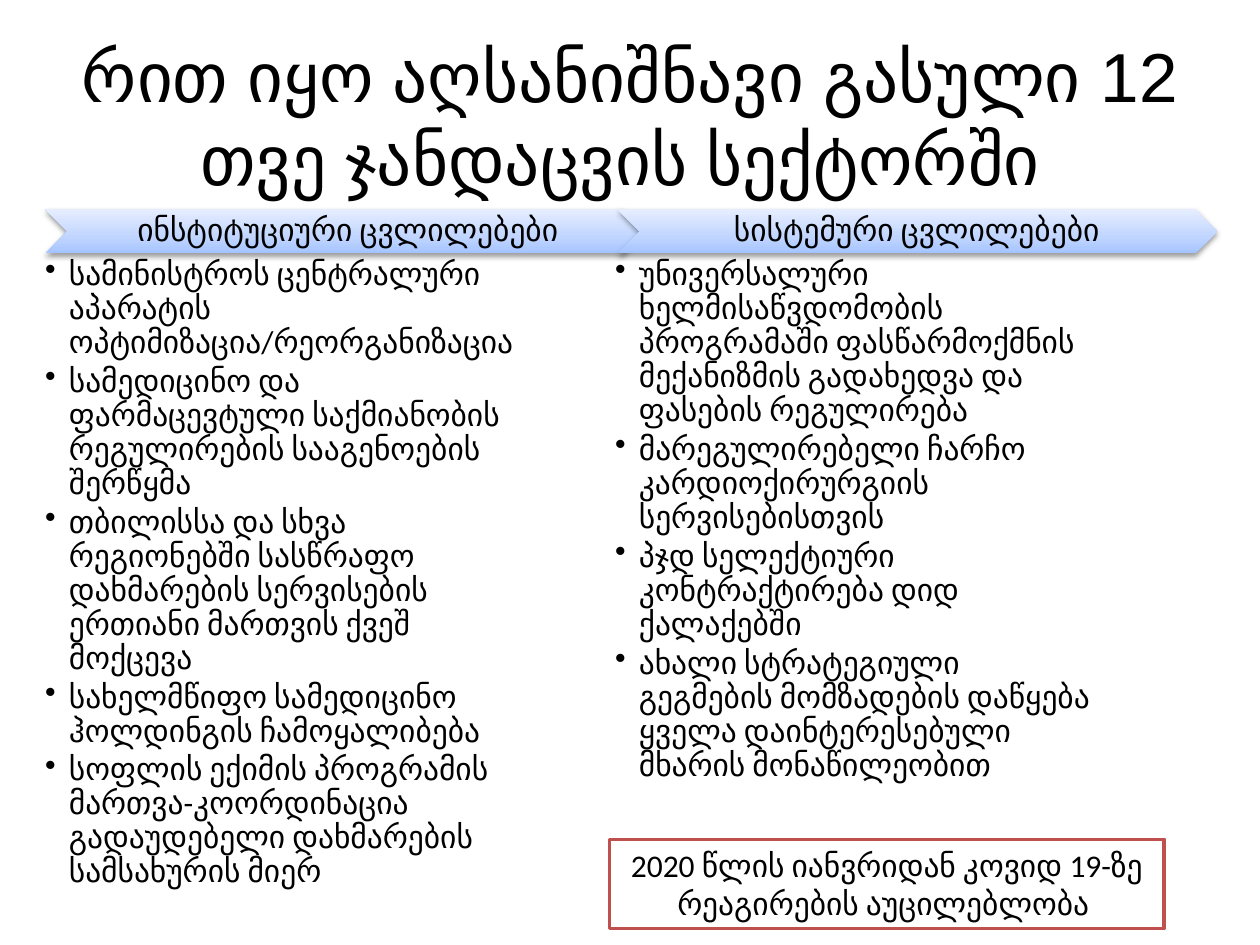
from copy import deepcopy
from dataclasses import dataclass

from pptx import Presentation
from pptx.dml.color import RGBColor
from pptx.enum.shapes import MSO_SHAPE
from pptx.enum.text import MSO_ANCHOR, MSO_AUTO_SIZE, PP_ALIGN
from pptx.oxml import parse_xml
from pptx.oxml.ns import nsdecls, qn
from pptx.util import Cm, Pt

CHEVRON, RECT = MSO_SHAPE.CHEVRON, MSO_SHAPE.RECTANGLE
TOP, MIDDLE = MSO_ANCHOR.TOP, MSO_ANCHOR.MIDDLE
LEFT, CENTER = PP_ALIGN.LEFT, PP_ALIGN.CENTER
NO_FIT = MSO_AUTO_SIZE.NONE


@dataclass(frozen=True)
class Theme:
    ink: str = "000000"
    paper: str = "FFFFFF"
    edge: str = "C0504D"
    blend: tuple = ((0, "A4C4FF"), (0.35, "BFD4FF"), (1, "E6EEFF"))
    head: float = 39.6
    body: float = 18
    head_font: str = "Arial"
    body_font: str = "Calibri"


THEME = Theme()

TITLE = "რით იყო აღსანიშნავი გასული 12 თვე ჯანდაცვის სექტორში "
NOTE = "2020 წლის იანვრიდან კოვიდ 19-ზე რეაგირების აუცილებლობა "
COLUMNS = [
    (0.91, 0.91, "ინსტიტუციური ცვლილებები", [
        "სამინისტროს ცენტრალური აპარატის ოპტიმიზაცია/რეორგანიზაცია",
        "სამედიცინო და ფარმაცევტული საქმიანობის რეგულირების სააგენოების შერწყმა",
        "თბილისსა და სხვა რეგიონებში სასწრაფო დახმარების სერვისების ერთიანი მართვის ქვეშ მოქცევა",
        "სახელმწიფო სამედიცინო ჰოლდინგის ჩამოყალიბება",
        "სოფლის ექიმის პროგრამის მართვა-კოორდინაცია გადაუდებელი დახმარების სამსახურის მიერ",
    ]),
    (12.45, 12.4, "სისტემური ცვლილებები ", [
        "უნივერსალური ხელმისაწვდომობის პროგრამაში ფასწარმოქმნის მექანიზმის გადახედვა და ფასების რეგულირება",
        "მარეგულირებელი ჩარჩო კარდიოქირურგიის სერვისებისთვის",
        "პჯდ სელექტიური კონტრაქტირება დიდ ქალაქებში",
        "ახალი სტრატეგიული გეგმების მომზადების დაწყება ყველა დაინტერესებული მხარის მონაწილეობით",
    ]),
]


def box(*sides):
    return [Cm(side) for side in sides]


def add_dot(para):
    props = para._p.get_or_add_pPr()
    props.set("marL", str(Cm(0.48)))
    props.set("indent", str(-Cm(0.48)))
    props.append(parse_xml(f'<a:buChar {nsdecls("a")} char="•"/>'))


def write(shape, lines, size=THEME.body, font=THEME.body_font, align=CENTER,
          anchor=MIDDLE, inset=(0.25, 0.13, 0.25, 0.13), pitch=None,
          after=0, dots=False):
    frame = shape.text_frame
    frame.word_wrap = True
    frame.auto_size = NO_FIT
    frame.vertical_anchor = anchor
    (frame.margin_left, frame.margin_top,
     frame.margin_right, frame.margin_bottom) = box(*inset)
    for i, line in enumerate(lines):
        para = frame.add_paragraph() if i else frame.paragraphs[0]
        para.alignment = align
        para.line_spacing = pitch
        para.space_after = Pt(after)
        if dots:
            add_dot(para)
        run = para.add_run()
        run.text = line
        run.font.size = Pt(size)
        run.font.name = font
        run.font.color.rgb = RGBColor.from_string(THEME.ink)


def add_blend(shape):
    fill = shape.fill
    fill.gradient()
    fill.gradient_angle = 90
    stops = shape._element.spPr.find(".//" + qn("a:gsLst"))
    stops.append(deepcopy(stops[0]))
    for stop, (place, color) in zip(fill.gradient_stops, THEME.blend):
        stop.position = place
        stop.color.rgb = RGBColor.from_string(color)


def add_shade(shape):
    shape.shadow.inherit = False
    shape._element.spPr.find(qn("a:effectLst")).append(parse_xml(
        f'<a:outerShdw {nsdecls("a")} blurRad="40000" dist="20000" '
        f'dir="5400000" rotWithShape="0"><a:srgbClr val="{THEME.ink}">'
        '<a:alpha val="38000"/></a:srgbClr></a:outerShdw>'))


def add_banner(slide, left, text):
    shape = slide.shapes.add_shape(CHEVRON, *box(left, 4.22, 12.09, 0.89))
    add_blend(shape)
    shape.line.fill.background()
    add_shade(shape)
    write(shape, [text], inset=(0.2, 0.08, 0.08, 0.08), pitch=0.9)


def add_list(slide, left, items):
    shape = slide.shapes.add_textbox(*box(left, 5.21, 9.65, 11.71))
    write(shape, items, align=LEFT, anchor=TOP, inset=(0, 0, 0, 0),
          pitch=0.9, after=2.7, dots=True)


def add_note(slide, text):
    shape = slide.shapes.add_shape(RECT, *box(12.29, 16.92, 11.18, 1.8))
    shape.shadow.inherit = False
    shape.fill.solid()
    shape.fill.fore_color.rgb = RGBColor.from_string(THEME.paper)
    shape.line.color.rgb = RGBColor.from_string(THEME.edge)
    shape.line.width = Pt(2)
    write(shape, [text], anchor=TOP)


def add_title(slide, text):
    title = slide.shapes.title
    title.left, title.top, title.width, title.height = box(
        1.27, 0.76, 22.86, 3.18)
    write(title, [text], size=THEME.head, font=THEME.head_font)


def main():
    deck = Presentation()
    deck.slide_width, deck.slide_height = box(25.4, 19.05)
    slide = deck.slides.add_slide(deck.slide_layouts[5])
    add_title(slide, TITLE)
    for start, left, head, items in COLUMNS:
        add_banner(slide, start, head)
        add_list(slide, left, items)
    add_note(slide, NOTE)
    deck.save("out.pptx")


if __name__ == "__main__":
    main()
